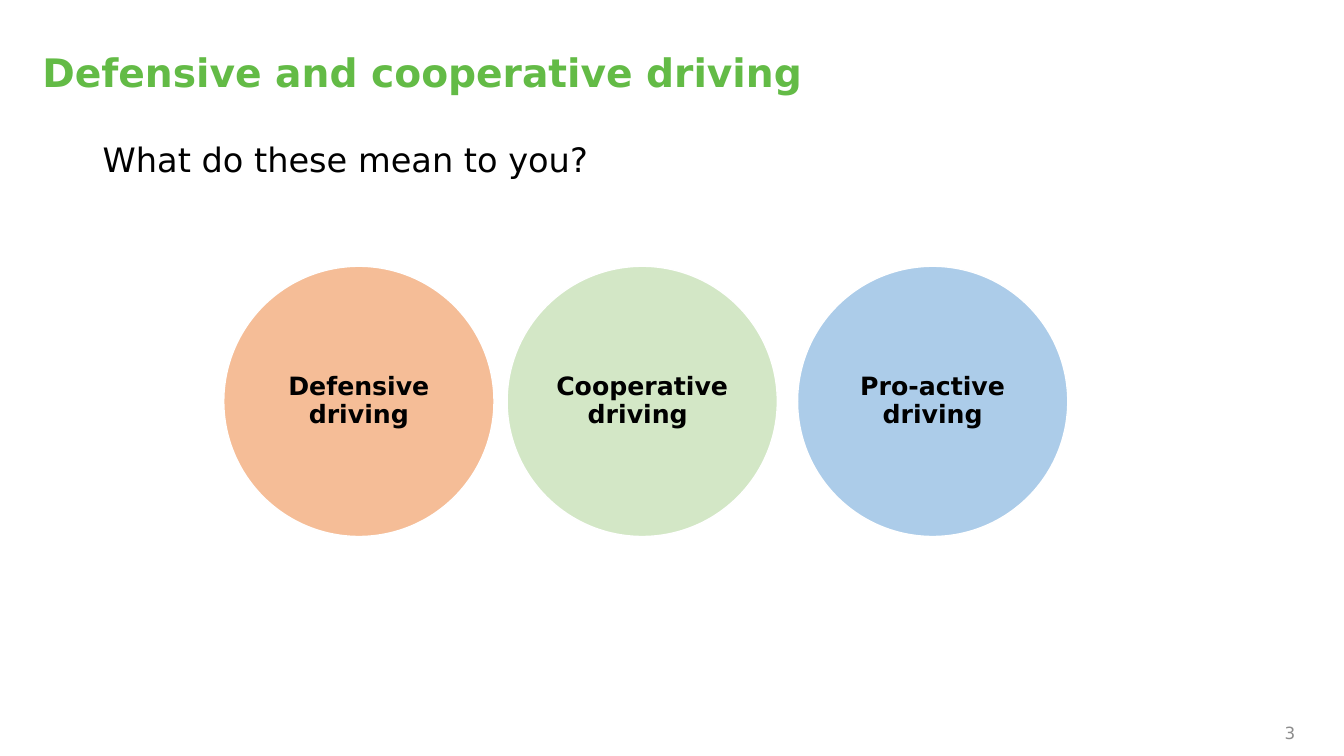
from dataclasses import dataclass

from lxml.etree import SubElement
from pptx import Presentation
from pptx.dml.color import RGBColor
from pptx.enum.shapes import MSO_SHAPE as Preset
from pptx.enum.text import MSO_ANCHOR as Anchor, PP_ALIGN as Align
from pptx.oxml.ns import qn
from pptx.shapes.autoshape import Shape
from pptx.slide import Slide
from pptx.util import Cm, Pt

FONT = "DejaVu Sans"
DIAMETER = 6.81
CIRCLE_TOP = 6.71


@dataclass(frozen=True)
class Label:
    text: str
    size: int
    color: str = "000000"
    bold: bool = False
    align: Align = Align.LEFT
    anchor: Anchor = Anchor.MIDDLE
    spacing: float = 0.9
    margin_x: float = 0
    margin_y: float = 0


@dataclass(frozen=True)
class TextArea:
    left: float
    top: float
    width: float
    height: float
    label: Label


@dataclass(frozen=True)
class DrivingStyle:
    text: str
    left: float
    color: str


TEXT_AREAS = [
    TextArea(1.07, 1.24, 29.85, 1.3,
             Label("Defensive and cooperative driving", 28, "63BB46", bold=True)),
    TextArea(2.34, 3.48, 29.21, 2.29,
             Label("What do these mean to you?", 24, anchor=Anchor.TOP,
                   margin_x=0.25, margin_y=0.13)),
    TextArea(25.02, 17.7, 7.62, 1.02,
             Label("3", 12, "8C8C8C", align=Align.RIGHT, anchor=Anchor.BOTTOM,
                   spacing=1.0)),
]

DRIVING_STYLES = [
    DrivingStyle("Defensive driving", 5.64, "ED7D31"),
    DrivingStyle("Cooperative driving ", 12.78, "A9D18E"),
    DrivingStyle("Pro-active driving", 20.1, "5B9BD5"),
]


def rgb(color: str) -> RGBColor:
    return RGBColor.from_string(color)


def apply_format(target: object, values: dict[str, object]) -> None:
    for name, value in values.items():
        setattr(target, name, value)


def write_label(shape: Shape, label: Label) -> None:
    frame = shape.text_frame
    apply_format(frame, {
        "word_wrap": True,
        "vertical_anchor": label.anchor,
        "margin_left": Cm(label.margin_x),
        "margin_right": Cm(label.margin_x),
        "margin_top": Cm(label.margin_y),
        "margin_bottom": Cm(label.margin_y),
    })
    paragraph = frame.paragraphs[0]
    apply_format(paragraph, {"alignment": label.align, "line_spacing": label.spacing})
    run = paragraph.add_run()
    run.text = label.text
    apply_format(run.font, {"name": FONT, "size": Pt(label.size), "bold": label.bold})
    run.font.color.rgb = rgb(label.color)


def draw_text_area(slide: Slide, area: TextArea) -> None:
    box = slide.shapes.add_textbox(
        Cm(area.left), Cm(area.top), Cm(area.width), Cm(area.height))
    write_label(box, area.label)


def draw_driving_style(slide: Slide, style: DrivingStyle) -> None:
    circle = slide.shapes.add_shape(
        Preset.OVAL, Cm(style.left), Cm(CIRCLE_TOP), Cm(DIAMETER), Cm(DIAMETER))
    circle.shadow.inherit = False
    circle.fill.solid()
    circle.fill.fore_color.rgb = rgb(style.color)
    fill_color = circle.fill._xPr.find(qn("a:solidFill")).find(qn("a:srgbClr"))
    SubElement(fill_color, qn("a:alpha"), val="50000")
    circle.line.color.rgb = rgb("FFFFFF")
    circle.line.width = Pt(1)
    write_label(circle, Label(style.text, 18, bold=True, align=Align.CENTER,
                              margin_x=0.18, margin_y=0.18))


def main() -> None:
    presentation = Presentation()
    apply_format(presentation, {"slide_width": Cm(33.87), "slide_height": Cm(19.05)})
    slide = presentation.slides.add_slide(presentation.slide_layouts[6])
    for area in TEXT_AREAS:
        draw_text_area(slide, area)
    for style in DRIVING_STYLES:
        draw_driving_style(slide, style)
    presentation.save("out.pptx")


if __name__ == "__main__":
    main()
